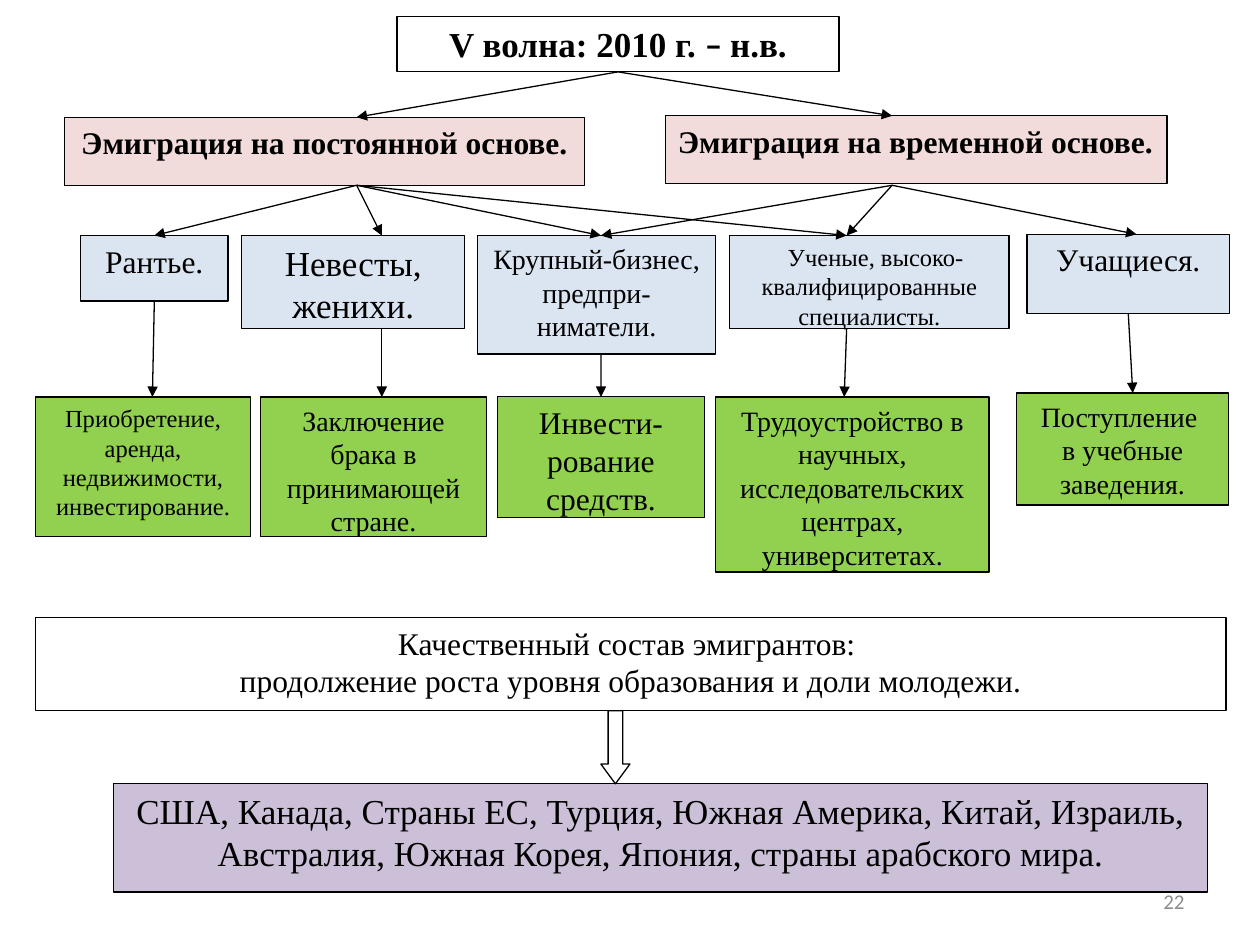
"""Build a slide showing the fifth wave of emigration as a flow chart."""
from dataclasses import dataclass

import pptx
import pptx.dml.color
import pptx.enum.shapes
import pptx.enum.text
import pptx.oxml.ns
import pptx.util
from lxml import etree

Pt = pptx.util.Pt
Align = pptx.enum.text.PP_ALIGN
Shape = pptx.enum.shapes.MSO_SHAPE
TOP, BOTTOM = 0, 2


@dataclass(frozen=True)
class Theme:
    """Colours, fonts and sizes of the slide."""
    ink: str = "000000"
    white: str = "FFFFFF"
    basis: str = "F2DBDB"
    group: str = "DBE5F1"
    purpose: str = "92D050"
    country: str = "CCC0D9"
    page: str = "8C8C8C"
    serif: str = "Times New Roman"
    sans: str = "Calibri"
    large: int = 20
    medium: int = 18
    normal: int = 16
    small: int = 14
    tiny: int = 12
    line: float = 0.75


THEME = Theme()


def rgb(value):
    """Return a colour object for a hex string."""
    return pptx.dml.color.RGBColor.from_string(value)


def format_text(frame, size, color, font, align, bold=False):
    """Format every run in a text frame."""
    frame.word_wrap = True
    for para in frame.paragraphs:
        para.alignment = align
        for span in para.runs:
            span.font.name = font
            span.font.size = Pt(size)
            span.font.bold = bold
            span.font.color.rgb = rgb(color)


def add_outlined(page, kind, place, fill):
    """Add a filled shape with a thin dark outline."""
    shape = page.shapes.add_shape(kind, *map(Pt, place))
    shape.shadow.inherit = False
    shape.fill.solid()
    shape.fill.fore_color.rgb = rgb(fill)
    shape.line.color.rgb = rgb(THEME.ink)
    shape.line.width = Pt(THEME.line)
    return shape


def add_box(page, place, fill, text, size, bold=False, align=Align.CENTER):
    """Add a rectangle with text set from its top."""
    box = add_outlined(page, Shape.RECTANGLE, place, fill)
    frame = box.text_frame
    frame.vertical_anchor = pptx.enum.text.MSO_ANCHOR.TOP
    frame.text = text
    format_text(frame, size, THEME.ink, THEME.serif, align, bold)
    return box


def add_title(page):
    """Add the title box, whose dash has its own font."""
    box = add_box(page, (226.8, 9.4, 252.7, 31.7), THEME.white,
                  "V волна: 2010 г. ", THEME.large, True)
    para = box.text_frame.paragraphs[0]
    for text in ("– ", "н.в."):
        para.add_run().text = text
    format_text(box.text_frame, THEME.large, THEME.ink, THEME.serif, Align.CENTER, True)
    para.runs[1].font.name = THEME.sans
    return box


def add_arrow(page, start, end, source=None, target=None):
    """Add an arrow, joined to the bottom of source and the top of target."""
    arrow = page.shapes.add_connector(
        pptx.enum.shapes.MSO_CONNECTOR.STRAIGHT, *map(Pt, (*start, *end)))
    if source is not None:
        arrow.begin_connect(source, BOTTOM)
    if target is not None:
        arrow.end_connect(target, TOP)
    arrow.line.color.rgb = rgb(THEME.ink)
    arrow.line.width = Pt(THEME.line)
    qn = pptx.oxml.ns.qn
    etree.SubElement(arrow.line._get_or_add_ln(), qn("a:tailEnd"), type="triangle")
    etree.SubElement(arrow._element.spPr, qn("a:effectLst"))


def add_groups(page):
    """Add the emigrant groups and return their boxes."""
    top = 134.6
    rows = (
        ((46.1, top, 84.2, 37.4), "Рантье.", THEME.medium),
        ((138.2, top, 127.4, 53.3), "Невесты, женихи.", THEME.large),
        ((272.9, top, 136.1, 67.7), "Крупный-бизнес, предпри-ниматели.", THEME.normal),
        ((416.9, top, 159.8, 53.3),
         "Ученые, высоко-квалифицированные специалисты.", THEME.small),
        ((586.8, 133.9, 115.9, 45.4), "Учащиеся.", THEME.medium),
    )
    boxes = [add_box(page, place, THEME.group, text, size) for place, text, size in rows]
    properties = boxes[3].text_frame.paragraphs[0]._p.get_or_add_pPr()
    properties.set("indent", str(Pt(7.2)))
    return boxes


def add_purposes(page):
    """Add the purposes of emigration and return their boxes."""
    top = 226.8
    rows = (
        ((20.2, top, 123.1, 79.9),
         "Приобретение, аренда, недвижимости, инвестирование.", THEME.small),
        ((149, top, 128.9, 79.9), "Заключение брака в принимающей стране.", THEME.normal),
        ((284.4, top, 118.1, 69.1), "Инвести-рование средств.", THEME.medium),
        ((409, top, 156.2, 100.1),
         "Трудоустройство в научных, исследовательских центрах, университетах.",
         THEME.normal),
        ((581, 224.6, 121, 64.1), "Поступление \nв учебные заведения.", THEME.normal),
    )
    return [add_box(page, place, THEME.purpose, text, size) for place, text, size in rows]


def add_summary(page):
    """Add the summary, the destination countries and the arrow between them."""
    add_box(page, (20.2, 352.8, 680.4, 53.3), THEME.white,
            "Качественный состав эмигрантов: \n"
            "продолжение роста уровня образования и доли молодежи.", THEME.medium)
    add_box(page, (65, 447.8, 625, 61.9), THEME.country,
            "США, Канада, Страны ЕС, Турция, Южная Америка, Китай, Израиль, "
            "Австралия, Южная Корея, Япония, страны арабского мира.", THEME.large)
    arrow = add_outlined(page, Shape.DOWN_ARROW, (343.4, 406.1, 16.6, 41.8), THEME.white)
    arrow.adjustments[1] = 0.68


def add_page_number(page):
    """Add the page number."""
    box = page.shapes.add_textbox(*map(Pt, (516.2, 500.4, 167.8, 28.8)))
    box.text_frame.text = "22"
    box.text_frame.vertical_anchor = pptx.enum.text.MSO_ANCHOR.MIDDLE
    format_text(box.text_frame, THEME.tiny, THEME.page, THEME.sans, Align.RIGHT)


def add_links(page, title, groups, purposes):
    """Add all arrows from the title down to the purposes."""
    permanent, temporary = (203.8, 105.9), (509.8, 105.9)
    for end in ((203.8, 67), (509.8, 66.2)):
        add_arrow(page, (353.1, 41.1), end, source=title)
    entries = ((87.8, 134.6), (218.2, 134.6), (343.4, 134.6), (483.8, 134.6), (649.4, 133.9))
    for hub, numbers in ((permanent, (0, 1, 2, 3)), (temporary, (2, 3, 4))):
        for number in numbers:
            target = groups[number] if number == 0 else None
            add_arrow(page, hub, entries[number], target=target)
    exits = ((88.2, 172), (218.2, 187.9), (343.4, 202.3), (483.8, 187.9), (644.7, 179.3))
    ends = ((87.1, 226.8), (218.2, 226.8), (343.4, 226.8), (482.4, 226.8), (647.3, 224.6))
    for number, (start, end) in enumerate(zip(exits, ends)):
        source = groups[number] if number in (0, 4) else None
        target = purposes[number] if number == 2 else None
        add_arrow(page, start, end, source, target)


def main():
    """Build and save the deck."""
    deck = pptx.Presentation()
    deck.slide_width, deck.slide_height = Pt(720), Pt(540)
    page = deck.slides.add_slide(deck.slide_layouts[6])
    title = add_title(page)
    add_box(page, (36.7, 67, 297.4, 38.9), THEME.basis,
            "Эмиграция на постоянной основе.", THEME.medium, True)
    add_box(page, (380.2, 66.2, 286.6, 38.9), THEME.basis,
            "Эмиграция на временной основе.", THEME.medium, True, Align.LEFT)
    groups = add_groups(page)
    purposes = add_purposes(page)
    add_summary(page)
    add_links(page, title, groups, purposes)
    add_page_number(page)
    deck.save("out.pptx")


if __name__ == "__main__":
    main()
